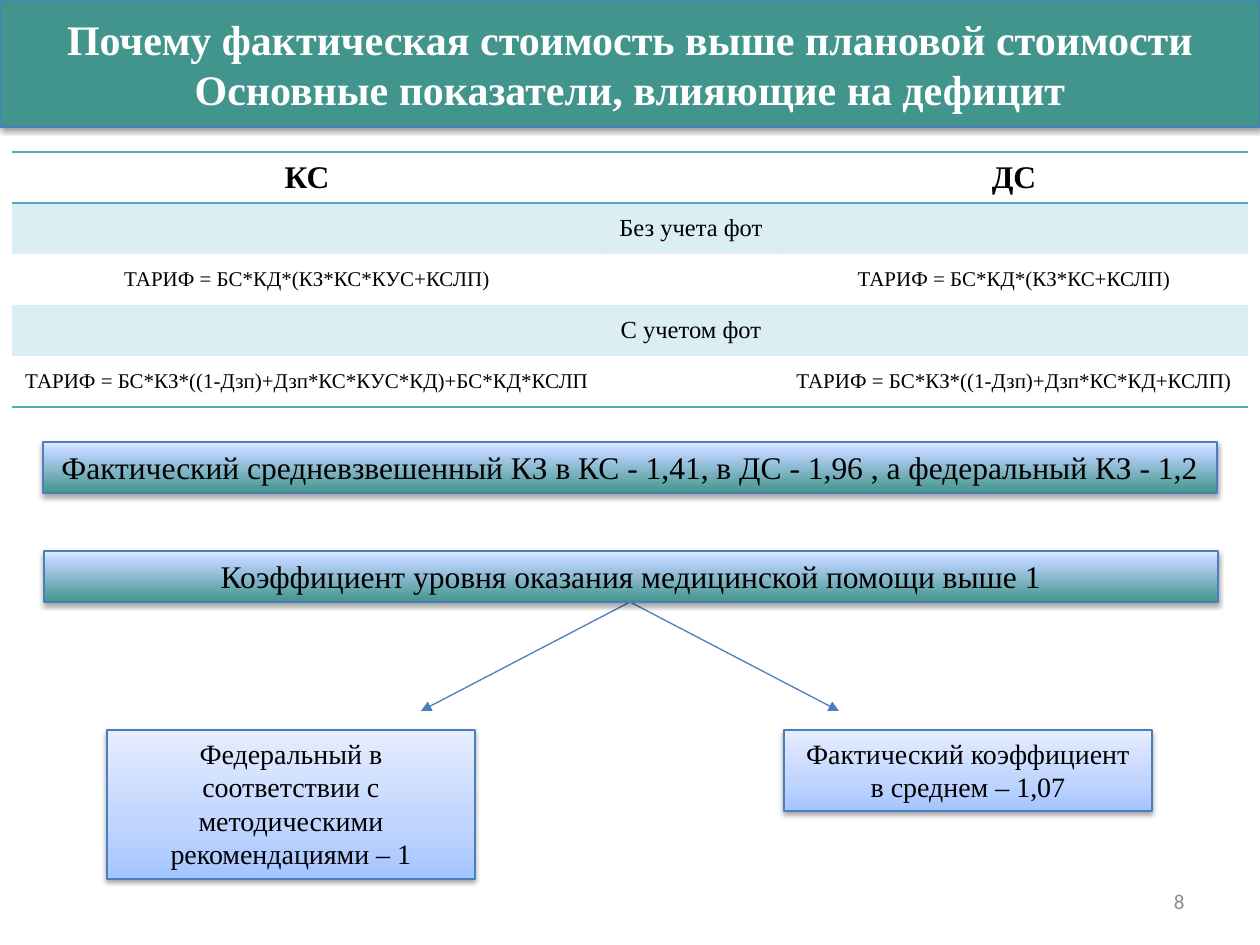
from dataclasses import dataclass
from typing import Any

from lxml.etree import SubElement
from pptx import Presentation
from pptx.dml.color import RGBColor
from pptx.enum.shapes import MSO_CONNECTOR, MSO_SHAPE
from pptx.enum.text import MSO_ANCHOR, PP_ALIGN
from pptx.oxml import parse_xml
from pptx.oxml.ns import nsdecls, qn
from pptx.util import Emu, Pt


@dataclass(frozen=True)
class Theme:
    serif: str = "Times New Roman"
    sans: str = "Calibri"
    teal: str = "42958D"
    outline: str = "4B7EBC"
    accent: str = "4BACC6"
    white: str = "FFFFFF"
    black: str = "000000"
    grey: str = "8C8C8C"
    bar_stops: tuple = ((0, "42958D"), (84, "BFD4FF"), (100, "E6EEFF"))
    note_stops: tuple = ((0, "A4C4FF"), (35, "BFD4FF"), (100, "E6EEFF"))
    title: int = 24
    heading: int = 18
    note: int = 16
    section: int = 14
    small: int = 12


THEME = Theme()
PX_PER_INCH = 126


@dataclass(frozen=True)
class Panel:
    text: str
    left: int
    top: int
    width: int
    height: int
    size: int
    stops: tuple = ()


@dataclass(frozen=True)
class Row:
    texts: tuple
    size: int
    bold: bool = False
    shaded: bool = False
    borders: tuple = ()


TITLE = Panel("Почему фактическая стоимость выше плановой стоимости\v"
              "Основные показатели, влияющие на дефицит",
              0, 0, 1260, 127, THEME.title)
NOTES = (
    Panel("Федеральный в соответствии с методическими рекомендациями – 1",
          107, 730, 368, 149, THEME.note, THEME.note_stops),
    Panel("Фактический коэффициент в среднем – 1,07",
          784, 730, 368, 81, THEME.note, THEME.note_stops),
)
BARS = (
    Panel("Фактический средневзвешенный КЗ в КС - 1,41, в ДС - 1,96 , а федеральный КЗ - 1,2",
          43, 442, 1174, 51, THEME.heading, THEME.bar_stops),
    Panel("Коэффициент уровня оказания медицинской помощи выше 1",
          44, 551, 1174, 51, THEME.heading, THEME.bar_stops),
)
ROWS = (
    Row(("КС", "", "ДС"), THEME.heading, bold=True, borders=("lnT", "lnB")),
    Row(("", "Без учета фот", ""), THEME.section, shaded=True),
    Row(("ТАРИФ = БС*КД*(КЗ*КС*КУС+КСЛП)", "", "ТАРИФ = БС*КД*(КЗ*КС+КСЛП)"), THEME.small),
    Row(("", "С учетом фот", ""), THEME.section, shaded=True),
    Row(("ТАРИФ = БС*КЗ*((1-Дзп)+Дзп*КС*КУС*КД)+БС*КД*КСЛП", "",
         "ТАРИФ = БС*КЗ*((1-Дзп)+Дзп*КС*КД+КСЛП)"), THEME.small, borders=("lnB",)),
)
COLUMN_WIDTHS = (590, 178, 468)
ROW_HEIGHT = 51


def px(length: int) -> Emu:
    return Emu(round(length * 914400 / PX_PER_INCH))


def set_values(target: Any, values: dict) -> None:
    for name, value in values.items():
        setattr(target, name, value)


def write(text_frame: Any, text: str, size: int, color: str = THEME.black,
          bold: bool = False, font: str = THEME.serif,
          alignment: PP_ALIGN = PP_ALIGN.CENTER) -> None:
    paragraph = text_frame.paragraphs[0]
    paragraph.text = text
    paragraph.alignment = alignment
    for run in paragraph.runs:
        set_values(run.font, {"name": font, "size": Pt(size), "bold": bold})
        run.font.color.rgb = RGBColor.from_string(color)


def set_outline(shape: Any) -> None:
    shape.line.color.rgb = RGBColor.from_string(THEME.outline)
    shape.line.width = Pt(0.75)


def add_shadow(shape: Any) -> None:
    shape.element.spPr.append(parse_xml(
        f'<a:effectLst {nsdecls("a")}><a:outerShdw blurRad="{Pt(3.1)}" dist="{Pt(1.7)}" '
        f'dir="5400000" rotWithShape="0"><a:srgbClr val="{THEME.black}">'
        '<a:alpha val="37000"/></a:srgbClr></a:outerShdw></a:effectLst>'))


def fill_gradient(shape: Any, stops: tuple) -> None:
    """Fill from the bottom edge upwards."""
    marks = "".join(f'<a:gs pos="{position * 1000}"><a:srgbClr val="{color}"/></a:gs>'
                    for position, color in stops)
    gradient = parse_xml(f'<a:gradFill {nsdecls("a")} rotWithShape="1"><a:gsLst>{marks}</a:gsLst>'
                         '<a:lin ang="16200000" scaled="0"/></a:gradFill>')
    shape.element.spPr.find(qn("a:prstGeom")).addnext(gradient)


def add_panel(slide: Any, panel: Panel) -> None:
    shape = slide.shapes.add_shape(MSO_SHAPE.RECTANGLE, px(panel.left), px(panel.top),
                                   px(panel.width), px(panel.height))
    set_outline(shape)
    add_shadow(shape)
    is_title = not panel.stops
    if is_title:
        shape.fill.solid()
        shape.fill.fore_color.rgb = RGBColor.from_string(THEME.teal)
    else:
        fill_gradient(shape, panel.stops)
    set_values(shape.text_frame, {
        "word_wrap": True,
        "vertical_anchor": MSO_ANCHOR.MIDDLE if is_title else MSO_ANCHOR.TOP})
    write(shape.text_frame, panel.text, panel.size,
          THEME.white if is_title else THEME.black, bold=is_title)


def add_arrow(slide: Any, start: tuple[int, int], end: tuple[int, int]) -> None:
    connector = slide.shapes.add_connector(MSO_CONNECTOR.STRAIGHT, *map(px, start + end))
    set_outline(connector)
    SubElement(connector.line._get_or_add_ln(), qn("a:tailEnd"), type="triangle")
    SubElement(connector.element.spPr, qn("a:effectLst"))


def format_cell(cell: Any, row: Row) -> None:
    cell.vertical_anchor = MSO_ANCHOR.MIDDLE
    if row.shaded:
        cell.fill.solid()
        cell.fill.fore_color.rgb = RGBColor.from_string(THEME.accent)
        SubElement(next(cell._tc.tcPr.iter(qn("a:srgbClr"))), qn("a:alpha"), val="20000")
    else:
        cell.fill.background()
    for index, side in enumerate(row.borders):
        cell._tc.tcPr.insert(index, parse_xml(
            f'<a:{side} {nsdecls("a")} w="{Pt(1)}"><a:solidFill>'
            f'<a:srgbClr val="{THEME.accent}"/></a:solidFill></a:{side}>'))


def add_tariff_table(slide: Any) -> None:
    table = slide.shapes.add_table(len(ROWS), len(COLUMN_WIDTHS), px(12), px(152),
                                   px(sum(COLUMN_WIDTHS)), px(ROW_HEIGHT * len(ROWS))).table
    set_values(table, {"first_row": False, "horz_banding": False})
    # The plain style has neither fills nor grid lines
    table._tbl.tblPr.find(qn("a:tableStyleId")).text = "{2D5ABB26-0587-4C30-8999-92F81FD0307C}"
    for column, width in zip(table.columns, COLUMN_WIDTHS):
        column.width = px(width)
    for row_index, row in enumerate(ROWS):
        table.rows[row_index].height = px(ROW_HEIGHT)
        for cell, text in zip(table.rows[row_index].cells, row.texts):
            format_cell(cell, row)
            if text:
                write(cell.text_frame, text, row.size, bold=row.bold)


def add_slide_number(slide: Any) -> None:
    box = slide.shapes.add_textbox(px(903), px(876), px(294), px(50))
    set_values(box.text_frame, {"word_wrap": True, "vertical_anchor": MSO_ANCHOR.MIDDLE})
    write(box.text_frame, "8", THEME.small, THEME.grey, font=THEME.sans,
          alignment=PP_ALIGN.RIGHT)


def main() -> None:
    presentation = Presentation()
    set_values(presentation, {"slide_width": px(1260), "slide_height": px(945)})
    slide = presentation.slides.add_slide(presentation.slide_layouts[6])

    # Number and title
    add_slide_number(slide)
    add_panel(slide, TITLE)

    # Arrows fan out from the lower bar to the two notes
    for direction in (-1, 1):
        add_arrow(slide, (630, 602), (630 + direction * 209, 711))
    for note in NOTES:
        add_panel(slide, note)

    # Tariff formulas and the bars below them
    add_tariff_table(slide)
    for bar in BARS:
        add_panel(slide, bar)

    presentation.save("out.pptx")


if __name__ == "__main__":
    main()
